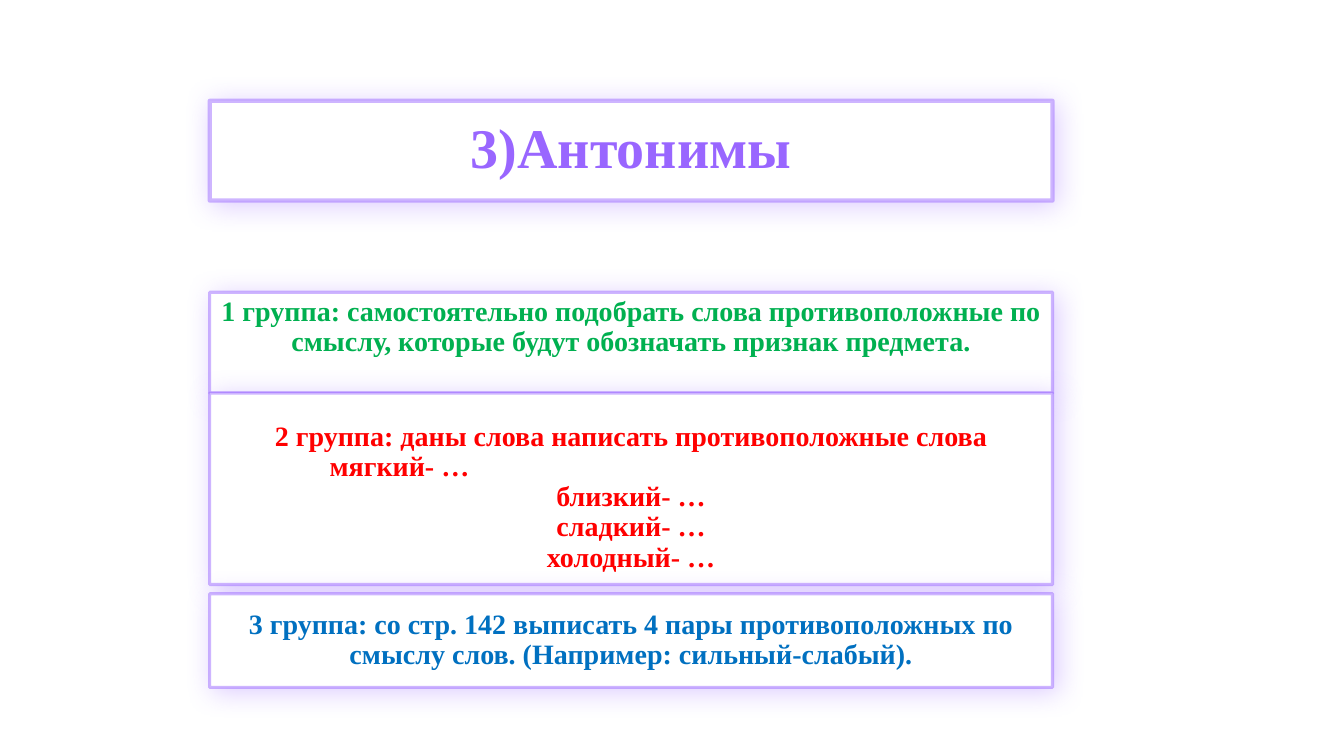
from dataclasses import dataclass

from lxml import etree
from pptx import Presentation
from pptx.dml.color import RGBColor
from pptx.enum import shapes, text
from pptx.oxml import ns
from pptx.util import Inches, Pt


@dataclass(frozen=True)
class Theme:
    font: str = "Times New Roman"
    white: str = "FFFFFF"
    violet: str = "9966FF"
    green: str = "00B050"
    red: str = "FF0000"
    blue: str = "0070C0"
    head: int = 40
    body: int = 20


def node(parent, tag, **attrs):
    """Add a DrawingML element below parent."""
    return etree.SubElement(parent, ns.qn("a:" + tag),
                            {k: str(v) for k, v in attrs.items()})


def write(frame, lines, font, size, color, inset=0.05, indents=None,
          anchor=text.MSO_ANCHOR.MIDDLE):
    """Write one paragraph per line; indents maps a line number to inches."""
    indents = indents or {}
    frame.word_wrap = True
    frame.auto_size = text.MSO_AUTO_SIZE.NONE
    frame.vertical_anchor = anchor
    frame.margin_left = frame.margin_right = Inches(0.1)
    frame.margin_top, frame.margin_bottom = Inches(inset), Inches(0.05)
    for i, line in enumerate(lines):
        para = frame.paragraphs[0] if i == 0 else frame.add_paragraph()
        para.alignment = text.PP_ALIGN.CENTER
        para.line_spacing = 0.9
        para.space_before = Pt(0)
        if i in indents:
            para.alignment = text.PP_ALIGN.LEFT
            para._p.get_or_add_pPr().set("marL", str(Inches(indents[i])))
        run = para.add_run()
        run.text = line
        run.font.name, run.font.size, run.font.bold = font, Pt(size), True
        run.font.color.rgb = RGBColor.from_string(color)


class Deck:
    left, width = 2.08, 8.36

    def __init__(self, theme):
        self.theme = theme
        self.prs = Presentation()
        self.prs.slide_width = Inches(13.33)
        self.prs.slide_height = Inches(7.5)
        self.slide = self.prs.slides.add_slide(self.prs.slide_layouts[5])

    def frame(self, box, top, height, weight):
        """Place a box and give it the white fill and glowing violet edge."""
        box.left, box.top = Inches(self.left), Inches(top)
        box.width, box.height = Inches(self.width), Inches(height)
        box.fill.solid()
        box.fill.fore_color.rgb = RGBColor.from_string(self.theme.white)
        box.line.width = Pt(weight)
        box.line.color.rgb = RGBColor.from_string(self.theme.violet)
        props = box._element.spPr
        edge = props.find(".//" + ns.qn("a:ln")).find(".//" + ns.qn("a:srgbClr"))
        node(edge, "alpha", val=47000)
        glow = node(node(props, "effectLst"), "outerShdw", blurRad=Pt(20),
                    dist=Pt(3), dir=45 * 60000, algn="ctr", rotWithShape=0)
        node(node(glow, "srgbClr", val=self.theme.violet), "alpha", val=34000)

    def title(self, line, top, height):
        box = self.slide.shapes.title
        self.frame(box, top, height, 3)
        write(box.text_frame, [line], self.theme.font, self.theme.head,
              self.theme.violet)

    def task(self, lines, top, height, color, **format):
        box = self.slide.shapes.add_shape(
            shapes.MSO_SHAPE.RECTANGLE, 0, 0, 0, 0)
        self.frame(box, top, height, 2.25)
        write(box.text_frame, lines, self.theme.font, self.theme.body,
              color, **format)


def main():
    theme = Theme()
    deck = Deck(theme)
    deck.title("3)Антонимы", 1, 0.99)
    deck.task(["1 группа: самостоятельно подобрать слова противоположные по "
               "смыслу, которые будут обозначать признак предмета."],
              2.9, 1, theme.green, anchor=text.MSO_ANCHOR.TOP)
    deck.task(["2 группа: даны слова написать противоположные слова",
               "мягкий- …", "близкий- …", "сладкий- …", "холодный- …"],
              3.9, 1.9, theme.red, inset=0.22, indents={1: 1.09})
    deck.task(["3 группа: со стр. 142 выписать 4 пары противоположных по "
               "смыслу слов. (Например: сильный-слабый)."],
              5.89, 0.93, theme.blue)
    deck.prs.save("out.pptx")


if __name__ == "__main__":
    main()
